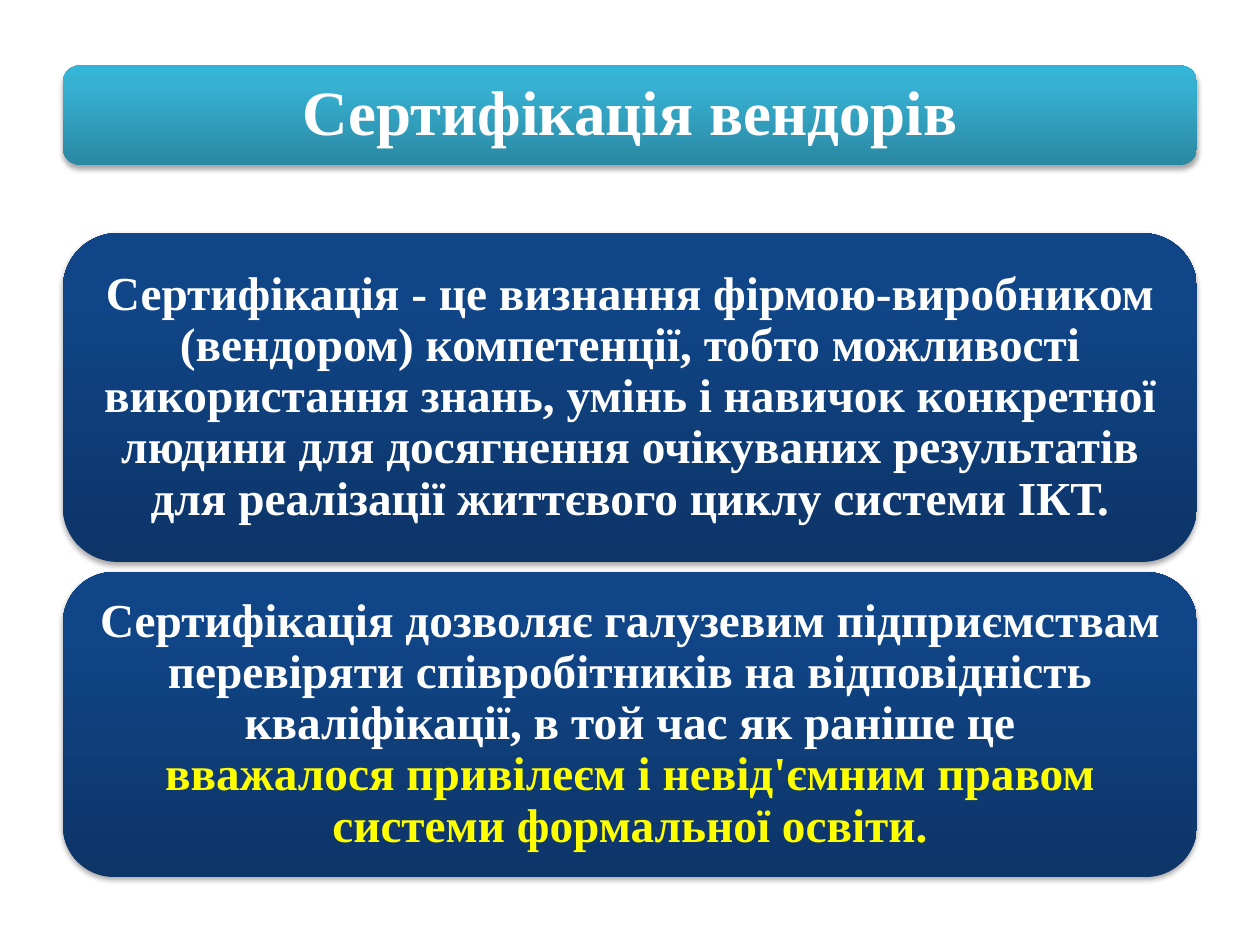
from lxml.etree import SubElement
from pptx import Presentation
from pptx.dml.color import RGBColor
from pptx.enum.shapes import MSO_SHAPE
from pptx.enum.text import MSO_ANCHOR, PP_ALIGN
from pptx.oxml.ns import qn
from pptx.util import Inches, Pt

# Content: each panel is a list of lines, each line a (text, colour) pair
TITLE = [("Сертифікація вендорів", "white")]
DEFINITION = [(
    "Сертифікація - це визнання фірмою-виробником (вендором) компетенції, "
    "тобто можливості використання знань, умінь і навичок конкретної людини "
    "для досягнення очікуваних результатів для реалізації життєвого циклу "
    "системи ІКТ.", "white")]
PURPOSE = [
    ("Сертифікація дозволяє галузевим підприємствам перевіряти "
     "співробітників на відповідність кваліфікації, в той час як раніше це",
     "white"),
    ("вважалося привілеєм і невід'ємним правом системи формальної освіти.",
     "yellow"),
]

COLOURS = {"white": "FFFFFF", "yellow": "FFFF00", "shadow": "000000"}
# Gradients run from bottom to top: position in percent, colour
GRADIENTS = {
    "teal": {0: "2A88A2", 80: "37B1D2", 100: "34B4D6"},
    "navy": {0: "0D3568", 80: "104587", 100: "0E458A"},
}
STYLES = {
    "title": {"gradient": "teal", "size": 36, "inset": 0.15},
    "body": {"gradient": "navy", "size": 27, "inset": 0.11},
}
LEFT, WIDTH = 0.5, 9
# Top, height, style, lines
PANELS = [
    (0.52, 0.79, "title", TITLE),
    (1.85, 2.61, "body", DEFINITION),
    (4.54, 2.42, "body", PURPOSE),
]


def add_colour(parent, colour):
    return SubElement(parent, qn("a:srgbClr"), val=colour)


def set_gradient(shape, stops):
    shape.fill.gradient()
    gradient = shape._element.spPr.find(qn("a:gradFill"))
    for child in list(gradient):
        gradient.remove(child)
    stop_list = SubElement(gradient, qn("a:gsLst"))
    for position, colour in stops.items():
        stop = SubElement(stop_list, qn("a:gs"), pos=str(position * 1000))
        add_colour(stop, colour)
    SubElement(gradient, qn("a:lin"), ang=str(270 * 60000), scaled="0")


def set_shadow(shape):
    shape.shadow.inherit = False
    effects = shape._element.spPr.find(qn("a:effectLst"))
    shadow = SubElement(
        effects, qn("a:outerShdw"), blurRad=str(Pt(3.1)), dist=str(Pt(1.8)),
        dir=str(90 * 60000), rotWithShape="0")
    colour = add_colour(shadow, COLOURS["shadow"])
    SubElement(colour, qn("a:alpha"), val="35000")


def add_panel(slide, top, height, style, lines):
    shape = slide.shapes.add_shape(
        MSO_SHAPE.ROUNDED_RECTANGLE,
        Inches(LEFT), Inches(top), Inches(WIDTH), Inches(height))
    set_gradient(shape, GRADIENTS[style["gradient"]])
    shape.line.fill.background()
    set_shadow(shape)

    # Text inside the panel
    frame = shape.text_frame
    frame.word_wrap = True
    frame.vertical_anchor = MSO_ANCHOR.MIDDLE
    for side in ("left", "top", "right", "bottom"):
        setattr(frame, f"margin_{side}", Inches(style["inset"]))
    paragraph = frame.paragraphs[0]
    paragraph.alignment = PP_ALIGN.CENTER
    paragraph.line_spacing = 0.9
    font_format = {"name": "Times New Roman", "size": Pt(style["size"]),
                   "bold": True}
    for index, (text, colour) in enumerate(lines):
        if index:
            paragraph.add_line_break()
        run = paragraph.add_run()
        run.text = text
        for name, value in font_format.items():
            setattr(run.font, name, value)
        run.font.color.rgb = RGBColor.from_string(COLOURS[colour])


def main():
    presentation = Presentation()
    presentation.slide_width = Inches(10)
    presentation.slide_height = Inches(7.5)
    slide = presentation.slides.add_slide(presentation.slide_layouts[6])
    for top, height, style, lines in PANELS:
        add_panel(slide, top, height, STYLES[style], lines)
    presentation.save("out.pptx")


if __name__ == "__main__":
    main()
